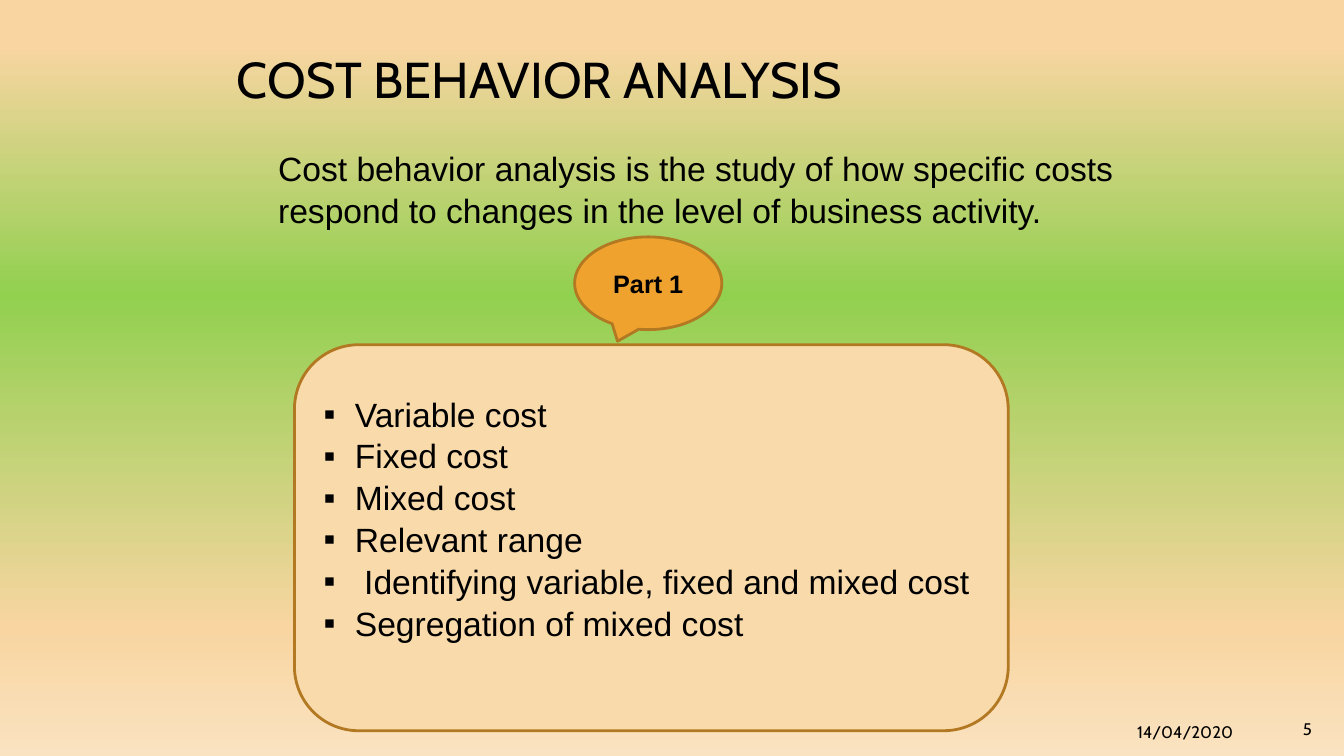
from dataclasses import dataclass

from lxml.etree import SubElement
from pptx import Presentation
from pptx.dml.color import RGBColor
from pptx.enum.shapes import MSO_SHAPE
from pptx.enum.text import MSO_ANCHOR, MSO_AUTO_SIZE, PP_ALIGN
from pptx.oxml.ns import qn
from pptx.util import Inches, Pt


@dataclass(frozen=True)
class Theme:
    """Hold the colours, fonts and type sizes of the slide."""
    ink: str = "000000"
    edge: str = "B27822"
    panel: str = "F9DAAB"
    call: str = "F0A22E"
    stops: tuple = ((6, "F8D5A1"), (39, "92D050"), (83, "F8D5A1"), (100, "FAE3C0"))
    head: str = "Cabin"
    body: str = "Arial"
    title: int = 36
    text: int = 24
    label: int = 18
    small: int = 12


THEME = Theme()
TOPICS = (
    "Variable cost",
    "Fixed cost",
    "Mixed cost",
    "Relevant range",
    " Identifying variable, ﬁxed and mixed cost",
    "Segregation of mixed cost",
)


def paint_back(slide):
    """Fill the background with the vertical gradient."""
    fill = slide.background.fill
    fill.gradient()
    fill.gradient_angle = 270
    stops = next(slide.element.iter(qn("a:gsLst")))
    stops.clear()
    for place, tone in THEME.stops:
        stop = SubElement(stops, qn("a:gs"), pos=str(place * 1000))
        SubElement(stop, qn("a:srgbClr"), val=tone)


def place(shape, box):
    """Move a shape to left, top, width and height in inches."""
    shape.left, shape.top, shape.width, shape.height = map(Inches, box)


def write(shape, lines, font, size, align=PP_ALIGN.LEFT, anchor=MSO_ANCHOR.TOP,
          bold=False, space=1.0):
    """Write one formatted paragraph for each line."""
    frame = shape.text_frame
    frame.word_wrap = True
    frame.auto_size = MSO_AUTO_SIZE.NONE
    frame.vertical_anchor = anchor
    frame.text = "\n".join(lines)
    for para in frame.paragraphs:
        para.alignment = align
        para.line_spacing = space
        para.space_before = Pt(0)
        para.font.name = font
        para.font.size = Pt(size)
        para.font.bold = bold
        para.font.color.rgb = RGBColor.from_string(THEME.ink)


def add_bullets(shape):
    """Give each paragraph a square bullet and a hanging indent."""
    hang = Inches(0.31)
    for para in shape.text_frame.paragraphs:
        props = para._p.get_or_add_pPr()
        props.set("marL", str(hang))
        props.set("indent", str(-hang))
        SubElement(props, qn("a:buFont"), typeface=THEME.body)
        SubElement(props, qn("a:buChar"), char="▪")


def add_text(slide, box, line, font, size, **style):
    """Add a text box with one paragraph."""
    text = slide.shapes.add_textbox(*map(Inches, box))
    write(text, [line], font, size, **style)


def add_panel(slide, kind, box, tone):
    """Add a filled and outlined preset shape."""
    shape = slide.shapes.add_shape(kind, *map(Inches, box))
    shape.shadow.inherit = False
    shape.fill.solid()
    shape.fill.fore_color.rgb = RGBColor.from_string(tone)
    shape.line.color.rgb = RGBColor.from_string(THEME.edge)
    shape.line.width = Pt(2)
    return shape


def main():
    """Build the slide and save it."""
    deck = Presentation()
    deck.slide_width, deck.slide_height = Inches(13.33), Inches(7.5)
    slide = deck.slides.add_slide(deck.slide_layouts[1])
    paint_back(slide)

    title, topics = slide.placeholders
    place(title, (2.25, 0.35, 8.67, 0.85))
    write(title, ["COST BEHAVIOR ANALYSIS"], THEME.head, THEME.title,
          anchor=MSO_ANCHOR.MIDDLE)
    add_text(slide, (2.66, 1.4, 8.51, 0.91),
             "Cost behavior analysis is the study of how speciﬁc costs "
             "respond to changes in the level of business activity.",
             THEME.body, THEME.text, space=1.04)

    panel = add_panel(slide, MSO_SHAPE.ROUNDED_RECTANGLE,
                      (2.92, 3.42, 7.08, 3.83), THEME.panel)
    panel.element.addnext(topics.element)
    place(topics, (3.11, 3.42, 6.7, 3.43))
    write(topics, TOPICS, THEME.body, THEME.text,
          anchor=MSO_ANCHOR.MIDDLE, space=1.04)
    add_bullets(topics)

    call = add_panel(slide, MSO_SHAPE.OVAL_CALLOUT,
                     (5.7, 2.35, 1.46, 0.92), THEME.call)
    write(call, ["Part 1"], THEME.body, THEME.label, align=PP_ALIGN.CENTER,
          anchor=MSO_ANCHOR.MIDDLE, bold=True)

    add_text(slide, (11.18, 7.11, 1.47, 0.24), "14/04/2020",
             THEME.head, THEME.small)
    add_text(slide, (12, 7.08, 1.11, 0.27), "5",
             THEME.head, THEME.small, align=PP_ALIGN.RIGHT)
    deck.save("out.pptx")


if __name__ == "__main__":
    main()
